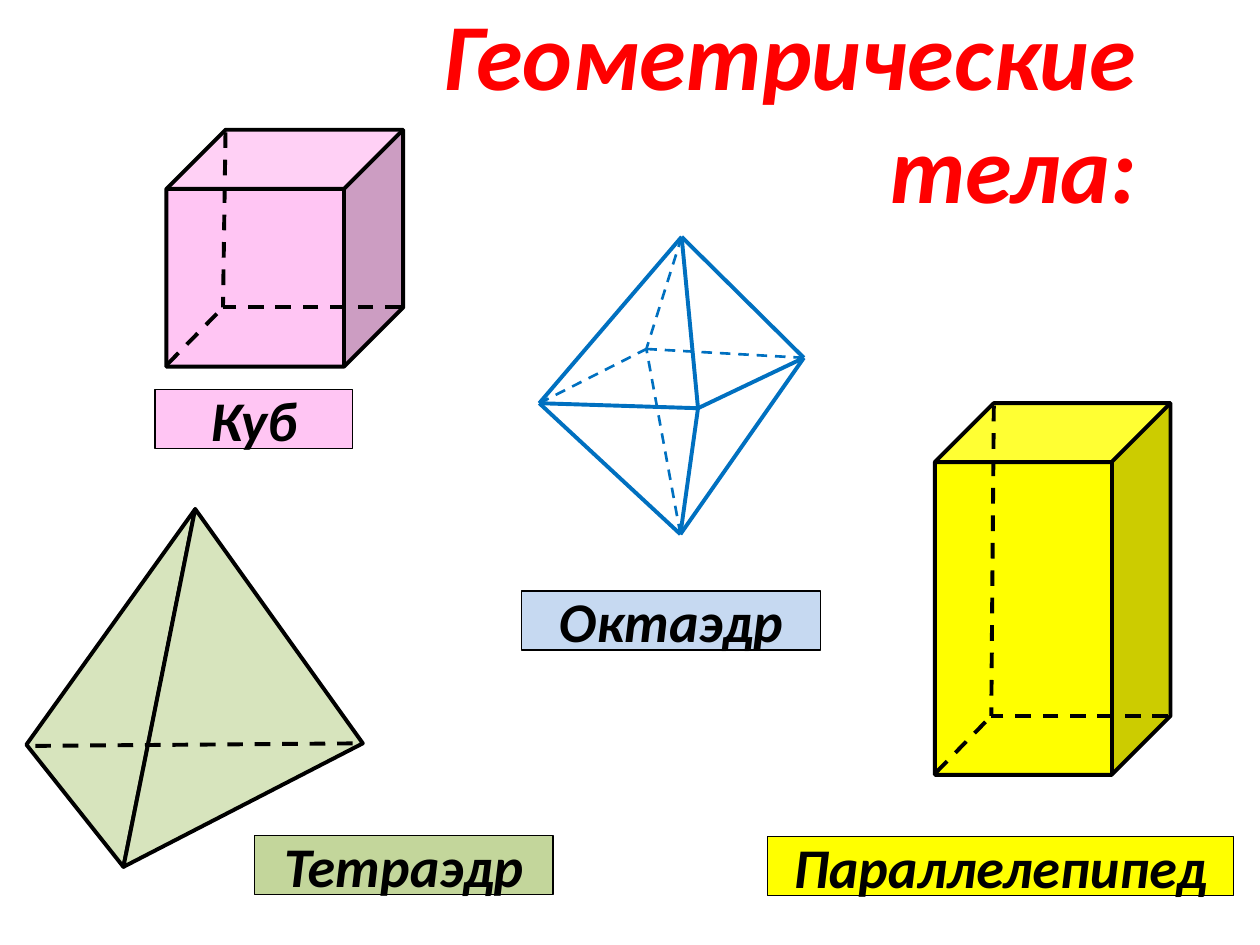
from lxml.etree import SubElement
from pptx import Presentation
from pptx.dml.color import RGBColor
from pptx.enum.dml import MSO_LINE
from pptx.enum.shapes import MSO_CONNECTOR, MSO_SHAPE
from pptx.enum.text import MSO_ANCHOR, MSO_AUTO_SIZE, PP_ALIGN
from pptx.oxml.ns import qn
from pptx.util import Inches, Pt

COLORS = {
    "title": "FF0000",
    "ink": "000000",
    "cube": "FFC5F3",
    "box": "FFFF00",
    "tetrahedron": "D7E4BD",
    "tetrahedron_label": "C3D69B",
    "octahedron": "0070C0",
    "octahedron_label": "C6D9F1",
}


def color(name):
    return RGBColor.from_string(COLORS[name])


def style_line(line, name, width, dashed=False):
    line.color.rgb = color(name)
    line.width = Pt(width)
    if dashed:
        line.dash_style = MSO_LINE.DASH


def style_shape(sp, fill, width):
    sp.shadow.inherit = False
    sp.fill.solid()
    sp.fill.fore_color.rgb = color(fill)
    style_line(sp.line, "ink", width)


def style_text(p, size, name):
    font = p.font
    font.name = "Calibri"
    font.size = Pt(size)
    font.bold = font.italic = True
    font.color.rgb = color(name)


def add_title(s, text):
    sp = s.shapes.title
    sp.left, sp.top, sp.width, sp.height = map(Inches, (2.84, 0.01, 7.05, 1.71))
    tf = sp.text_frame
    tf.text = text
    tf.auto_size = MSO_AUTO_SIZE.NONE
    tf.vertical_anchor = MSO_ANCHOR.MIDDLE
    tf.margin_right = Inches(0.87)
    p = tf.paragraphs[0]
    p.alignment = PP_ALIGN.RIGHT
    style_text(p, 54, "title")


def add_label(s, text, left, top, width, fill):
    sp = s.shapes.add_shape(MSO_SHAPE.RECTANGLE, Inches(left), Inches(top),
                            Inches(width), Inches(0.47))
    style_shape(sp, fill, 0.75)
    tf = sp.text_frame
    tf.text = text
    tf.word_wrap = False
    tf.vertical_anchor = MSO_ANCHOR.MIDDLE
    p = tf.paragraphs[0]
    p.alignment = PP_ALIGN.CENTER
    style_text(p, 32, "ink")


def add_edge(s, start, end, name="ink", width=2.25, dashed=False):
    edge = s.shapes.add_connector(MSO_CONNECTOR.STRAIGHT,
                                  *map(Inches, (*start, *end)))
    style_line(edge.line, name, width, dashed)
    SubElement(edge._element.spPr, qn("a:effectLst"))


def add_face(s, points, fill):
    first, *rest = [(Inches(x), Inches(y)) for x, y in points]
    builder = s.shapes.build_freeform(*first)
    builder.add_line_segments(rest, close=True)
    style_shape(builder.convert_to_shape(), fill, 2.25)


def add_prism(s, left, top, width, height, fill):
    """Draw a cube shape with its three hidden edges dashed."""
    sp = s.shapes.add_shape(MSO_SHAPE.CUBE, *map(Inches, (left, top, width, height)))
    sp.adjustments[0] = 0.25
    style_shape(sp, fill, 2.25)
    depth = width / 4
    bottom = top + height
    corner = (left + depth - 0.02, bottom - depth)
    for end in ((left + depth, top + 0.02),
                (left + width - 0.02, corner[1]),
                (left + 0.01, bottom - 0.02)):
        add_edge(s, end, corner, dashed=True)


def add_tetrahedron(s):
    left, front, apex, right = (0.21, 5.91), (0.98, 6.88), (1.55, 4.04), (2.88, 5.9)
    for side in (left, right):
        add_face(s, (side, front, apex), "tetrahedron")
    add_edge(s, (0.28, 5.92), (2.81, 5.9), dashed=True)


def add_octahedron(s):
    top, bottom = (5.41, 1.88), (5.4, 4.24)
    left, front, right, back = (4.28, 3.2), (5.54, 3.24), (6.38, 2.84), (5.13, 2.77)
    for tip in (top, bottom):
        for corner in (left, front, right):
            add_edge(s, tip, corner, "octahedron")
    for corner in (left, right):
        add_edge(s, corner, front, "octahedron")
    for corner in (top, bottom, left, right):
        add_edge(s, corner, back, "octahedron", 1.5, dashed=True)


def main():
    prs = Presentation()
    prs.slide_width, prs.slide_height = Inches(10), Inches(7.5)
    s = prs.slides.add_slide(prs.slide_layouts[5])
    add_title(s, "Геометрические\vтела:")
    add_tetrahedron(s)
    add_prism(s, 1.32, 1.03, 1.88, 1.88, "cube")
    add_prism(s, 7.42, 3.2, 1.87, 2.95, "box")
    add_octahedron(s)
    add_label(s, "Куб", 1.23, 3.09, 1.57, "cube")
    add_label(s, "Параллелепипед", 6.09, 6.64, 3.7, "box")
    add_label(s, "Тетраэдр", 2.02, 6.63, 2.37, "tetrahedron_label")
    add_label(s, "Октаэдр", 4.14, 4.69, 2.37, "octahedron_label")
    prs.save("out.pptx")


if __name__ == "__main__":
    main()
